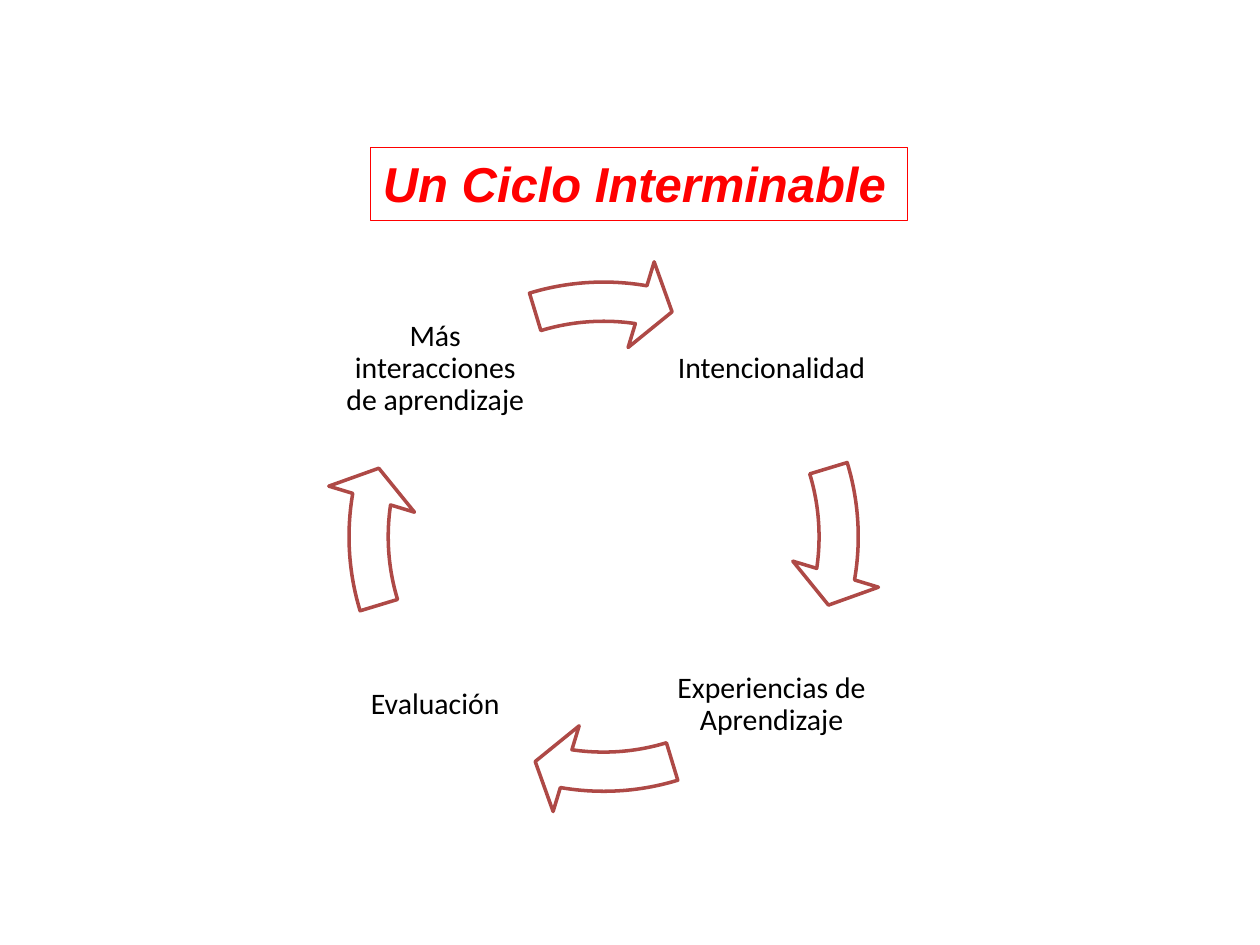
"""Build a slide showing the endless four-stage learning cycle."""
import pptx
import pptx.dml.color
import pptx.enum.shapes
import pptx.enum.text
import pptx.util

Cm = pptx.util.Cm
Pt = pptx.util.Pt
COLORS = {"title": "FF0000", "arrow": "AE4946", "fill": "FFFFFF", "text": "000000"}


def rgb(name):
    return pptx.dml.color.RGBColor.from_string(COLORS[name])


presentation = pptx.Presentation()
presentation.slide_width = Cm(25.4)
presentation.slide_height = Cm(19.05)
slide = presentation.slides.add_slide(presentation.slide_layouts[6])

LEFT, TOP, STEP, LABEL_SIZE = 6.78, 5.44, 6.78, 3.99
QUARTER_TURN, FULL_TURN = 54, 216
stages = [
    ("Intencionalidad", 1, 0),
    ("Experiencias de Aprendizaje", 1, 1),
    ("Evaluación", 0, 1),
    ("Más interacciones de aprendizaje", 0, 0),
]

for index, (label, column, row) in enumerate(stages):
    box = slide.shapes.add_textbox(
        Cm(LEFT + column * STEP), Cm(TOP + row * STEP), Cm(LABEL_SIZE), Cm(LABEL_SIZE)
    )
    frame = box.text_frame
    frame.word_wrap = True
    frame.vertical_anchor = pptx.enum.text.MSO_ANCHOR.MIDDLE
    frame.margin_left = frame.margin_right = Cm(0.05)
    frame.margin_top = frame.margin_bottom = Cm(0.05)
    paragraph = frame.paragraphs[0]
    paragraph.alignment = pptx.enum.text.PP_ALIGN.CENTER
    paragraph.line_spacing = 0.9
    run = paragraph.add_run()
    run.text = label
    run.font.name = "Calibri"
    run.font.size = Pt(17)
    run.font.color.rgb = rgb("text")

    arrow = slide.shapes.add_shape(
        pptx.enum.shapes.MSO_SHAPE.CIRCULAR_ARROW, Cm(6.53), Cm(5.18), Cm(11.28), Cm(11.28)
    )
    turn = index * QUARTER_TURN
    angles = [0.07, 4.65, 5.51 + turn, (205.84 + turn) % FULL_TURN, 0.08]
    for position, value in enumerate(angles):
        arrow.adjustments[position] = value
    arrow.shadow.inherit = False
    arrow.fill.solid()
    arrow.fill.fore_color.rgb = rgb("fill")
    arrow.line.color.rgb = rgb("arrow")
    arrow.line.width = Pt(2)

title = slide.shapes.add_textbox(Cm(7.47), Cm(2.97), Cm(10.82), Cm(1.47))
title.line.color.rgb = rgb("title")
title.line.width = Pt(0.75)
title.text_frame.word_wrap = True
title.text_frame.auto_size = pptx.enum.text.MSO_AUTO_SIZE.SHAPE_TO_FIT_TEXT
run = title.text_frame.paragraphs[0].add_run()
run.text = "Un Ciclo Interminable"
run.font.name = "Arial"
run.font.size = Pt(28)
run.font.bold = True
run.font.italic = True
run.font.color.rgb = rgb("title")

presentation.save("out.pptx")
